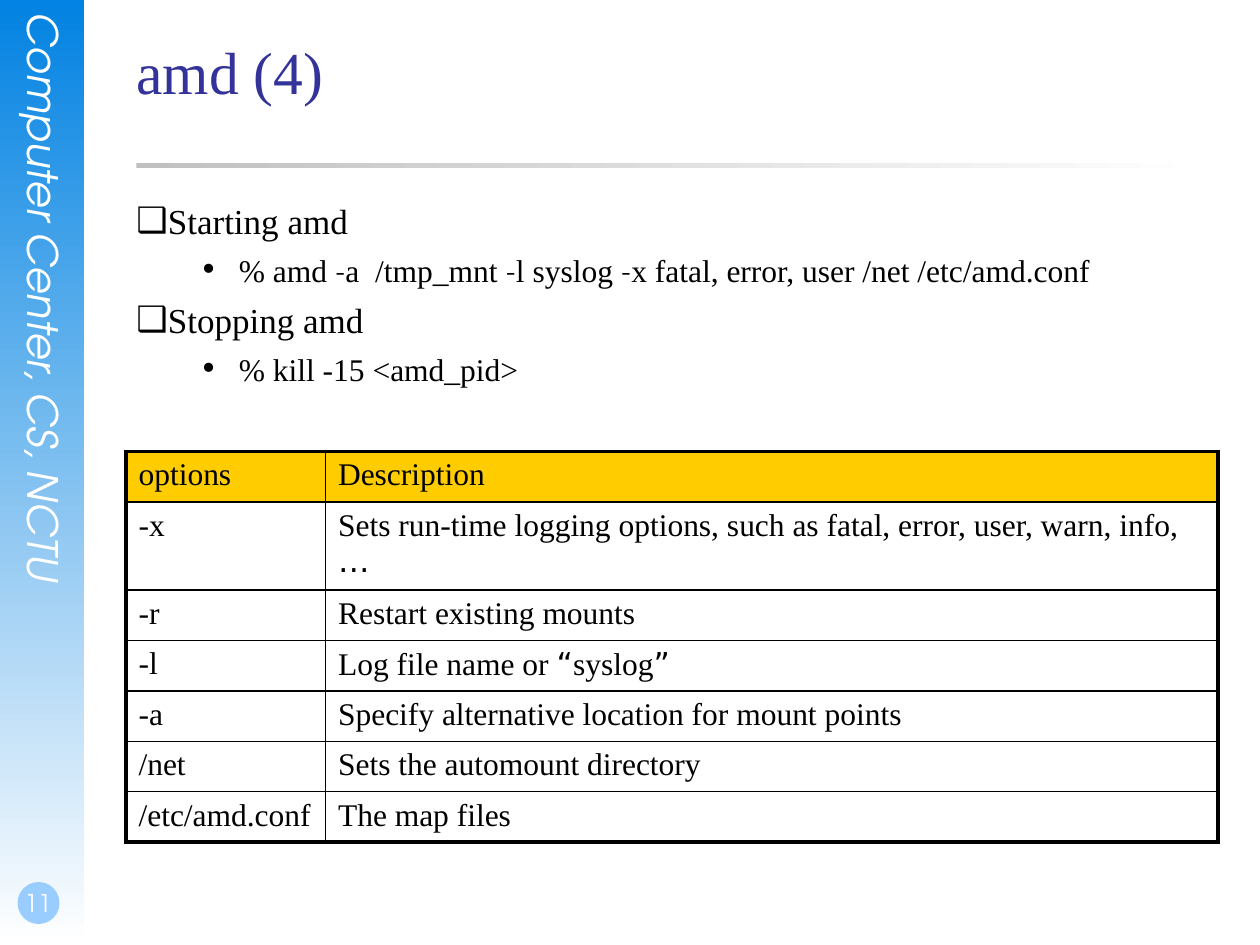
import dataclasses
import typing

import pptx
import pptx.dml.color
import pptx.enum.shapes
import pptx.enum.text
import pptx.oxml
import pptx.oxml.ns
import pptx.util

Pt = pptx.util.Pt
Align = pptx.enum.text.PP_ALIGN
Anchor = pptx.enum.text.MSO_ANCHOR
Shape = pptx.enum.shapes.MSO_SHAPE
qn = pptx.oxml.ns.qn


@dataclasses.dataclass(frozen=True)
class Theme:
    serif: str = "Times New Roman"
    sans: str = "TeX Gyre Adventor"
    dash: str = "Cambria"
    symbol: str = "DejaVu Sans"
    black: str = "000000"
    white: str = "FFFFFF"
    title: str = "333399"
    band: str = "0282E2"
    badge: str = "99CCFF"
    rule: str = "C0C0C0"
    header: str = "FFCC00"
    title_size: float = 34
    banner_size: float = 24
    heading_size: float = 20
    text_size: float = 18
    number_size: float = 14
    thick: float = 2.25
    thin: float = 1


THEME = Theme()


class Frame(typing.NamedTuple):
    left: float
    top: float
    width: float
    height: float

    def lengths(self) -> list:
        return [Pt(value) for value in self]


class Span(typing.NamedTuple):
    text: str
    font: str = THEME.serif


class Bullet(typing.NamedTuple):
    mark: str
    size: float
    margin: float
    indent: float
    spans: list


def set_all(target: typing.Any, values: dict) -> None:
    for name, value in values.items():
        setattr(target, name, value)


def rgb(color: str) -> pptx.dml.color.RGBColor:
    return pptx.dml.color.RGBColor.from_string(color)


def write(para: typing.Any, spans: list, size: float, color: str, italic: bool = False) -> None:
    for text, font in spans:
        span = para.add_run()
        span.text = text
        set_all(span.font, {"name": font, "size": Pt(size), "italic": italic})
        span.font.color.rgb = rgb(color)
        if font == THEME.symbol:
            east_asian = pptx.oxml.parse_xml(
                f'<a:ea {pptx.oxml.ns.nsdecls("a")} typeface="{font}"/>')
            span.font._element.append(east_asian)


def prepare(box: typing.Any, margins: tuple = (0, 0, 0, 0), anchor: Anchor = Anchor.TOP) -> typing.Any:
    left, top, right, bottom = map(Pt, margins)
    set_all(box.text_frame, {
        "word_wrap": True, "vertical_anchor": anchor,
        "auto_size": pptx.enum.text.MSO_AUTO_SIZE.NONE,
        "margin_left": left, "margin_top": top,
        "margin_right": right, "margin_bottom": bottom,
    })
    return box.text_frame


def add_block(page: typing.Any, kind: Shape, frame: Frame, colors: list, angle: float = 0) -> None:
    shape = page.shapes.add_shape(kind, *frame.lengths())
    shape.shadow.inherit = False
    shape.line.fill.background()
    if len(colors) == 1:
        shape.fill.solid()
        shape.fill.fore_color.rgb = rgb(colors[0])
        return
    shape.fill.gradient()
    shape.fill.gradient_angle = angle
    for stop, color in zip(shape.fill.gradient_stops, colors):
        stop.color.rgb = rgb(color)


def add_sidebar(page: typing.Any) -> None:
    add_block(page, Shape.RECTANGLE, Frame(0, 0, 48, 540), [THEME.band, THEME.white], 270)
    box = page.shapes.add_textbox(*Frame(10.8, 7.2, 28.8, 368).lengths())
    text = prepare(box)
    text._txBody.bodyPr.set("vert", "eaVert")
    write(text.paragraphs[0], [Span("Computer Center, CS, NCTU", THEME.sans)],
          THEME.banner_size, THEME.white, True)
    add_block(page, Shape.OVAL, Frame(10, 504, 24, 24), [THEME.badge])
    box = page.shapes.add_textbox(*Frame(0, 492, 42, 36).lengths())
    para = prepare(box, (1.4, 0, 0, 3.6), Anchor.BOTTOM).paragraphs[0]
    para.alignment = Align.CENTER
    write(para, [Span("11", THEME.sans)], THEME.number_size, THEME.white)


def add_title(page: typing.Any, title: str) -> None:
    add_block(page, Shape.RECTANGLE, Frame(78, 93, 612, 3), [THEME.rule, THEME.white])
    box = page.shapes.title
    set_all(box, dict(zip(Frame._fields, Frame(78, 20, 612, 90).lengths())))
    para = prepare(box).paragraphs[0]
    para.alignment = Align.LEFT
    write(para, [Span(title)], THEME.title_size, THEME.title)


def add_bullets(page: typing.Any, bullets: list) -> None:
    text = prepare(page.shapes.add_textbox(*Frame(78, 114, 612, 336).lengths()))
    for index, bullet in enumerate(bullets):
        para = text.paragraphs[0] if index == 0 else text.add_paragraph()
        para.space_before = Pt(bullet.size * 0.29)
        properties = para._p.get_or_add_pPr()
        properties.set("marL", str(Pt(bullet.margin)))
        properties.set("indent", str(Pt(bullet.indent)))
        for tag, name, value in (("buFont", "typeface", THEME.symbol), ("buChar", "char", bullet.mark)):
            properties.append(pptx.oxml.parse_xml(
                f'<a:{tag} {pptx.oxml.ns.nsdecls("a")} {name}="{value}"/>'))
        write(para, bullet.spans, bullet.size, THEME.black)


def set_borders(cell: typing.Any, widths: dict) -> None:
    properties = cell._tc.get_or_add_tcPr()
    for index, (side, width) in enumerate(widths.items()):
        properties.insert(index, pptx.oxml.parse_xml(
            f'<a:ln{side} {pptx.oxml.ns.nsdecls("a")} w="{Pt(width)}"><a:solidFill>'
            f'<a:srgbClr val="{THEME.black}"/></a:solidFill></a:ln{side}>'))


def add_options(page: typing.Any, rows: list) -> None:
    widths = [114, 510]
    heights = [28.8, 50.4] + [28.8] * (len(rows) - 2)
    frame = Frame(72, 258, sum(widths), sum(heights))
    table = page.shapes.add_table(len(rows), len(widths), *frame.lengths()).table
    set_all(table, {"first_row": False, "horz_banding": False})
    for column, width in zip(table.columns, widths):
        column.width = Pt(width)
    for y, (row, height) in enumerate(zip(rows, heights)):
        table.rows[y].height = Pt(height)
        for x, spans in enumerate(row):
            cell = table.cell(y, x)
            set_all(cell, {"margin_left": Pt(7.2), "margin_right": Pt(7.2),
                           "margin_top": Pt(3.6), "margin_bottom": Pt(3.6)})
            if y == 0:
                cell.fill.solid()
                cell.fill.fore_color.rgb = rgb(THEME.header)
            else:
                cell.fill.background()
            outer = {"L": x == 0, "R": x == len(widths) - 1,
                     "T": y == 0, "B": y == len(rows) - 1}
            set_borders(cell, {side: THEME.thick if edge else THEME.thin
                               for side, edge in outer.items()})
            write(cell.text_frame.paragraphs[0], spans, THEME.text_size, THEME.black)


def heading(text: str) -> Bullet:
    return Bullet("❑", THEME.heading_size, 0, 0, [Span(text)])


def command(*spans: Span) -> Bullet:
    return Bullet("•", THEME.text_size, 58.5, -22.5, list(spans))


def main() -> None:
    deck = pptx.Presentation()
    set_all(deck, {"slide_width": Pt(720), "slide_height": Pt(540)})
    page = deck.slides.add_slide(deck.slide_layouts[5])
    dash = Span("-", THEME.dash)
    add_sidebar(page)
    add_title(page, "amd (4)")
    add_bullets(page, [
        heading("Starting amd"),
        command(Span("% amd "), dash, Span("a  /tmp_mnt "), dash, Span("l syslog "), dash,
                Span("x fatal, error, user /net /etc/amd.conf")),
        heading("Stopping amd"),
        command(Span("% kill -15 <amd_pid>")),
    ])
    add_options(page, [
        [[Span("options")], [Span("Description")]],
        [[Span("-x")], [Span("Sets run-time logging options, such as fatal, error, user, warn, info, "),
                        Span("…", THEME.symbol)]],
        [[Span("-r")], [Span("Restart existing mounts")]],
        [[Span("-l")], [Span("Log file name or "), Span("“", THEME.symbol), Span("syslog"),
                        Span("”", THEME.symbol)]],
        [[Span("-a")], [Span("Specify alternative location for mount points")]],
        [[Span("/net")], [Span("Sets the automount directory")]],
        [[Span("/etc/amd.conf")], [Span("The map files")]],
    ])
    deck.save("out.pptx")


if __name__ == "__main__":
    main()
